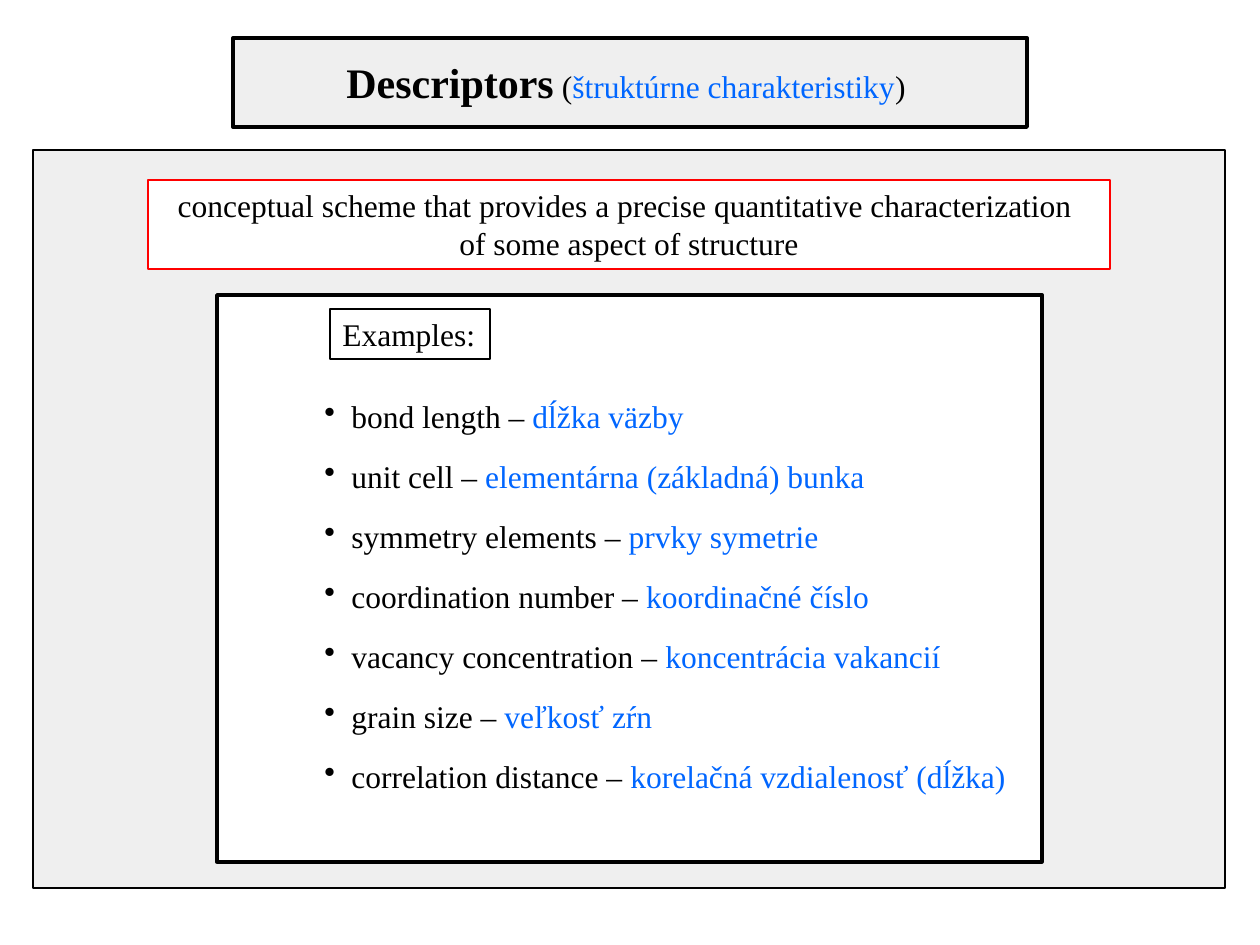
from lxml.etree import SubElement
from pptx import Presentation
from pptx.dml.color import RGBColor
from pptx.enum.shapes import MSO_SHAPE
from pptx.enum.text import MSO_ANCHOR, MSO_AUTO_SIZE, PP_ALIGN
from pptx.oxml.ns import qn
from pptx.util import Pt

PX = 914400 / 126
COLORS = {"black": "000000", "blue": "0066FF", "red": "FF0000",
          "grey": "EFEFEF", "white": "FFFFFF"}
BULLET_INDENT = 27

prs = Presentation()
prs.slide_width = round(1260 * PX)
prs.slide_height = round(945 * PX)
slide = prs.slides.add_slide(prs.slide_layouts[6])


def add_box(left, top, width, height, fill="white", line="black", weight=1.5):
    box = slide.shapes.add_shape(
        MSO_SHAPE.RECTANGLE, *(round(v * PX) for v in (left, top, width, height)))
    box.shadow.inherit = False
    box.fill.solid()
    box.fill.fore_color.rgb = RGBColor.from_string(COLORS[fill])
    box.line.color.rgb = RGBColor.from_string(COLORS[line])
    box.line.width = Pt(weight)
    return box


def write(shape, paragraphs, align=PP_ALIGN.LEFT, bullet=False):
    """Fill a shape with paragraphs, each a list of (text, color, size, bold)."""
    frame = shape.text_frame
    frame.word_wrap = False
    frame.auto_size = MSO_AUTO_SIZE.SHAPE_TO_FIT_TEXT
    frame.vertical_anchor = MSO_ANCHOR.TOP
    for i, runs in enumerate(paragraphs):
        paragraph = frame.add_paragraph() if i else frame.paragraphs[0]
        paragraph.alignment = align
        if bullet:
            props = paragraph._p.get_or_add_pPr()
            props.set("marL", str(round(BULLET_INDENT * PX)))
            props.set("indent", str(-round(BULLET_INDENT * PX)))
            SubElement(props, qn("a:buChar")).set("char", "•")
        for text, color, size, bold in runs:
            run = paragraph.add_run()
            run.text = text
            run.font.name = "Times New Roman"
            run.font.size = Pt(size)
            run.font.bold = bold
            run.font.color.rgb = RGBColor.from_string(COLORS[color])


# Title
add_box(233, 38, 794, 89, fill="grey", weight=2.25)
add_box(33, 150, 1192, 738, fill="grey")
title = slide.shapes.add_textbox(*(round(v * PX) for v in (334, 50, 590, 63)))
write(title, [[("Descriptors", "black", 24, True),
               (" (", "black", 18, False),
               ("štruktúrne charakteristiky", "blue", 18, False),
               (")", "black", 18, False)]])

# Definition
definition = add_box(148, 180, 962, 89, line="red")
definition_lines = [
    "conceptual scheme that provides a precise quantitative characterization ",
    "of some aspect of structure",
]
write(definition, [[(line, "black", 18, False)] for line in definition_lines],
      align=PP_ALIGN.CENTER)

# Examples
add_box(217, 295, 825, 567, weight=2)
examples_label = add_box(330, 309, 160, 50, weight=0.75)
write(examples_label, [[("Examples:", "black", 18, False)]])

examples = [
    ("bond length", "dĺžka väzby", 388),
    ("unit cell", "elementárna (základná) bunka", 571),
    ("symmetry elements", "prvky symetrie", 524),
    ("coordination number", "koordinačné číslo", 576),
    ("vacancy concentration", "koncentrácia vakancií", 648),
    ("grain size", "veľkosť zŕn", 357),
    ("correlation distance", "korelačná vzdialenosť (dĺžka)", 713),
]
for row, (english, slovak, width) in enumerate(examples):
    example = slide.shapes.add_textbox(
        *(round(v * PX) for v in (312, 391 + 60 * row, width, 50)))
    write(example, [[(f"{english} – ", "black", 18, False),
                     (slovak, "blue", 18, False)]], bullet=True)

prs.save("out.pptx")
